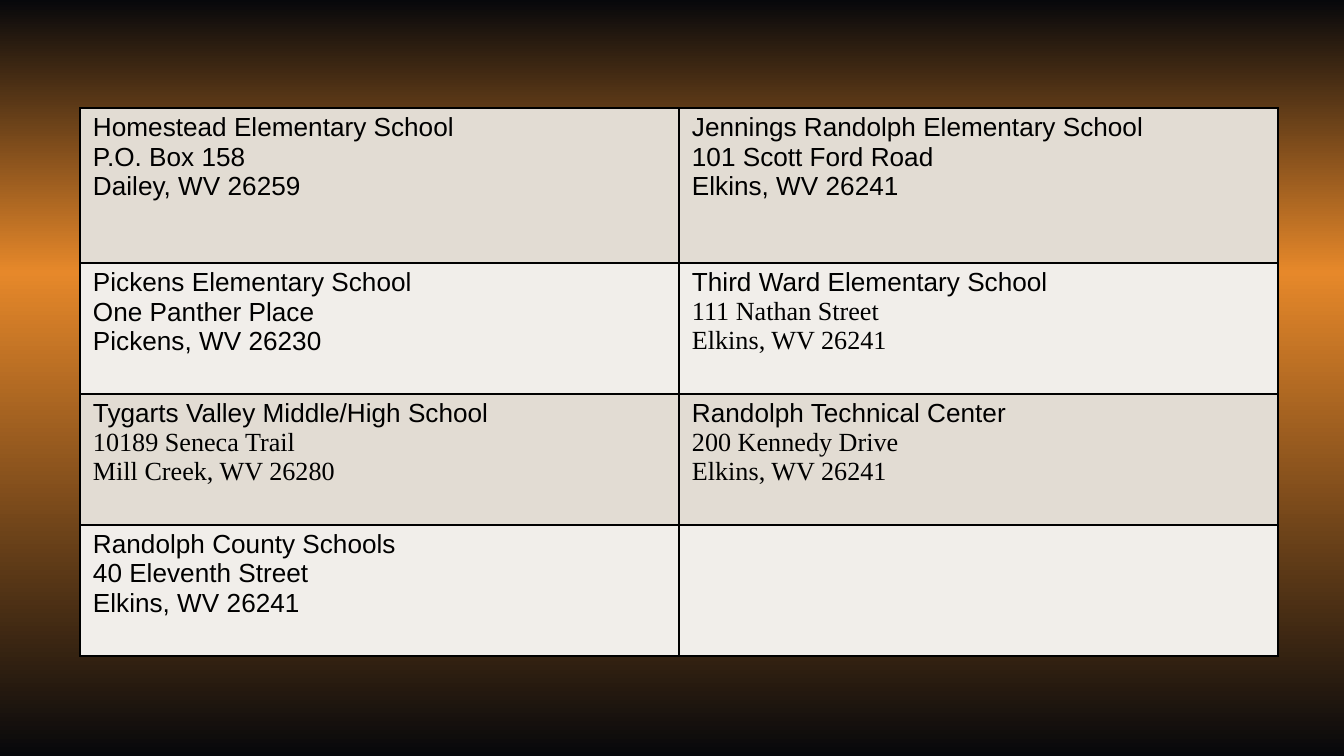
"""Build a slide with a table of school addresses on a glowing background."""
import copy

import pptx
import pptx.dml.color
import pptx.enum.text
import pptx.oxml
import pptx.oxml.ns
import pptx.util

THEME = {
    "dark": "07080B", "glow": "E6882A", "ink": "000000",
    "bands": ("E2DCD3", "F1EEEA"),
    "sans": "Arial", "serif": "Times New Roman", "size": 14, "line": 1,
}
SCALE = 9144000 / 1344


def px(count):
    return pptx.util.Emu(round(count * SCALE))


def write(para, text, font=THEME["sans"], size=THEME["size"], ink=THEME["ink"]):
    run = para.add_run()
    run.text = text
    run.font.name = font
    run.font.size = pptx.util.Pt(size)
    run.font.color.rgb = pptx.dml.color.RGBColor.from_string(ink)
    para.alignment = pptx.enum.text.PP_ALIGN.LEFT


sans, serif = THEME["sans"], THEME["serif"]
schools = [
    [(sans, "Homestead Elementary School", "P.O. Box 158", "Dailey, WV 26259"),
     (sans, "Jennings Randolph Elementary School", "101 Scott Ford Road", "Elkins, WV 26241")],
    [(sans, "Pickens Elementary School", "One Panther Place", "Pickens, WV 26230"),
     (serif, "Third Ward Elementary School", "111 Nathan Street", "Elkins, WV 26241")],
    [(sans, "Tygarts Valley Middle/High School", "10189 Seneca Trail", "Mill Creek, WV 26280"),
     (serif, "Randolph Technical Center", "200 Kennedy Drive", "Elkins, WV 26241")],
    [(sans, "Randolph County Schools", "40 Eleventh Street", "Elkins, WV 26241"), None],
]
schools[2][0] = (serif, *schools[2][0][1:])

deck = pptx.Presentation()
deck.slide_width, deck.slide_height = px(1344), px(756)
slide = deck.slides.add_slide(deck.slide_layouts[6])

fill = slide.background.fill
fill.gradient()
fill.gradient_angle = 270
stops = slide.element.find(".//" + pptx.oxml.ns.qn("a:gsLst"))
stops.append(copy.deepcopy(stops[0]))
shades = [(0, THEME["dark"]), (0.36, THEME["glow"]), (1, THEME["dark"])]
for stop, (place, shade) in zip(fill.gradient_stops, shades):
    stop.position = place
    stop.color.rgb = pptx.dml.color.RGBColor.from_string(shade)

heights = [155, 131, 131, 131]
frame = slide.shapes.add_table(4, 2, px(80), px(108), px(1198), px(sum(heights)))
table = frame.table
table.first_row = table.horz_banding = False
for col in table.columns:
    col.width = px(599)

for r, (height, pair) in enumerate(zip(heights, schools)):
    table.rows[r].height = px(height)
    for c, school in enumerate(pair):
        cell = table.cell(r, c)
        cell.margin_left = cell.margin_right = px(13)
        cell.margin_top = cell.margin_bottom = px(5)
        props = cell._tc.get_or_add_tcPr()
        for side in ("lnL", "lnR", "lnT", "lnB"):
            props.append(pptx.oxml.parse_xml(
                f'<a:{side} {pptx.oxml.ns.nsdecls("a")} w="{pptx.util.Pt(THEME["line"])}">'
                f'<a:solidFill><a:srgbClr val="{THEME["ink"]}"/></a:solidFill></a:{side}>'))
        cell.fill.solid()
        cell.fill.fore_color.rgb = pptx.dml.color.RGBColor.from_string(THEME["bands"][r % 2])
        if school:
            font, name, *lines = school
            write(cell.text_frame.paragraphs[0], name)
            for line in lines:
                write(cell.text_frame.add_paragraph(), line, font=font)

deck.save("out.pptx")
